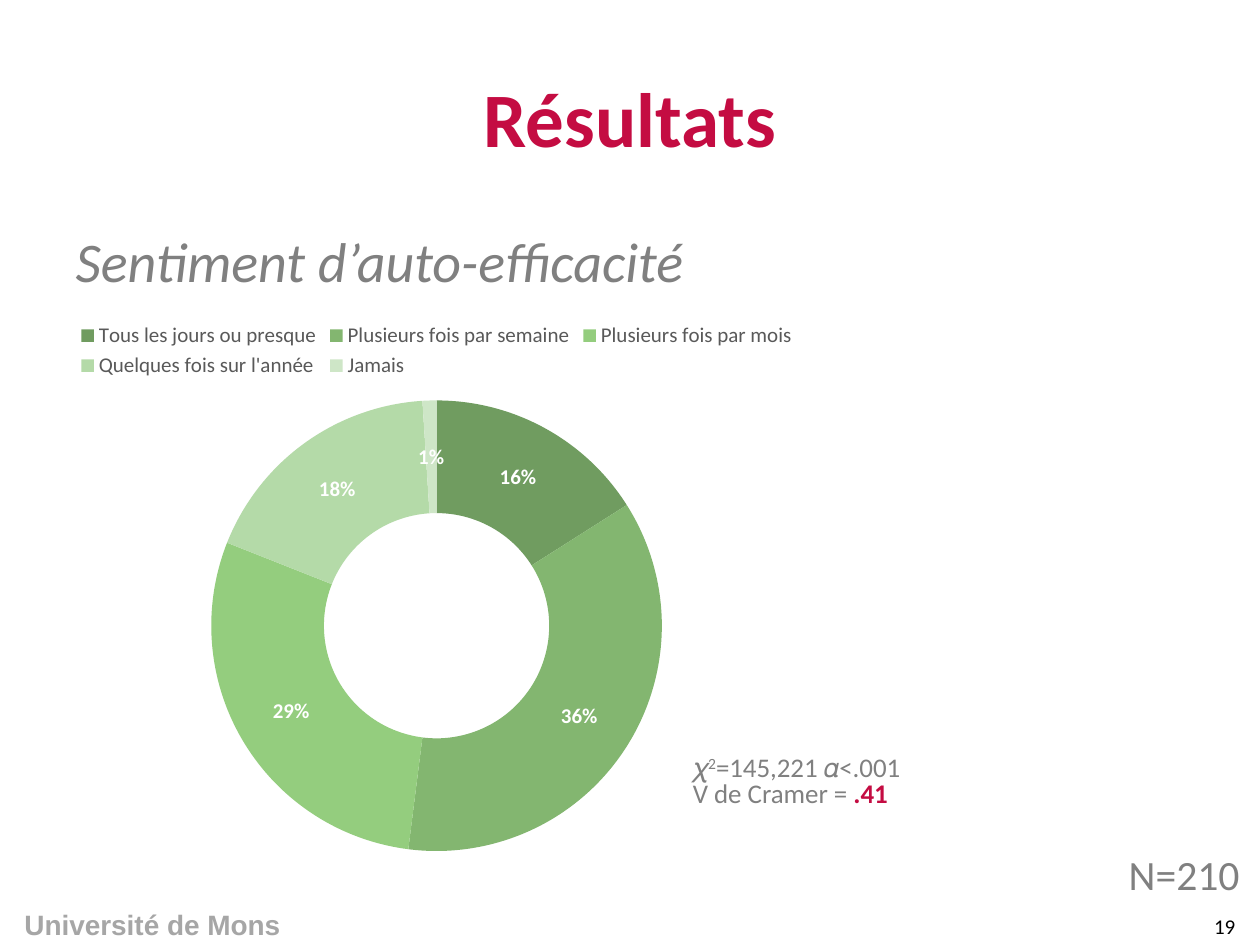
"""Build the results slide with a doughnut chart of self-efficacy."""
import pptx
import pptx.util
import pptx.chart.data
import pptx.dml.color
import pptx.enum.chart
import pptx.enum.text
import pptx.oxml
import pptx.oxml.ns

WIDE, HIGH = 10, 7.5
GREY, RED = "808080", "C40C42"
ALIGN = pptx.enum.text.PP_ALIGN
MIDDLE = pptx.enum.text.MSO_ANCHOR.MIDDLE

TITLE = "Résultats"
TOPIC = "Sentiment d’auto-efficacité"
SHARES = [
    ("Tous les jours ou presque", 16, "709C60"),
    ("Plusieurs fois par semaine", 36, "83B670"),
    ("Plusieurs fois par mois", 29, "94CD7E"),
    ("Quelques fois sur l'année", 18, "B4DAA8"),
    ("Jamais", 1, "CEE6C7"),
]
STATS = [
    [("𝜒", {}), ("2", {"raised": True}), ("=145,221 𝛼<.001", {})],
    [("V de Cramer = ", {}), (".41", {"color": RED, "bold": True})],
]
NOTES = [
    {"box": (-.1, 95.4, 24.4, 4.9), "lines": [[("Université de Mons", {})]],
     "size": 16, "color": "A6A6A6", "face": "Arial", "bold": True, "align": ALIGN.CENTER},
    {"box": (54, 79.4, 20.1, 7.5), "lines": STATS, "size": 15.4, "space": .8},
    {"box": (88.6, 90.2, 11.1, 5.9), "lines": [[("N=210", {})]], "size": 23.8, "space": .8},
    {"box": (94.4, 96, 5.6, 4), "lines": [[("19", {})]],
     "size": 12, "color": "000000", "align": ALIGN.CENTER, "anchor": MIDDLE},
]


def place(*box):
    return [pptx.util.Inches(part * full / 100)
            for part, full in zip(box, (WIDE, HIGH) * 2)]


def move(shape, box):
    shape.left, shape.top, shape.width, shape.height = place(*box)


def style(font, size, color=GREY, face="Calibri", bold=False, italic=False):
    font.size, font.name = pptx.util.Pt(size), face
    font.bold, font.italic = bold, italic
    font.color.rgb = pptx.dml.color.RGBColor.from_string(color)


def note(slide, box, lines, size, color=GREY, face="Calibri", bold=False,
         align=ALIGN.LEFT, space=None, anchor=None):
    frame = slide.shapes.add_textbox(*place(*box)).text_frame
    frame.word_wrap = False
    frame.vertical_anchor = anchor
    for i, line in enumerate(lines):
        para = frame.add_paragraph() if i else frame.paragraphs[0]
        para.alignment, para.line_spacing = align, space
        mixed = any("color" in look for _, look in line)
        if not mixed:
            style(para.font, size, color, face, bold)
        for text, look in line:
            run = para.add_run()
            run.text = text
            if mixed:
                style(run.font, size, look.get("color", color), face, look.get("bold", bold))
            if look.get("raised"):
                run.font._element.set("baseline", "30000")


def heads(slide):
    title, body = slide.shapes.title, slide.placeholders[1]
    move(title, (5, 4, 90, 16.7))
    move(body, (5, 23.3, 90, 66))
    title.text_frame.text, body.text_frame.text = TITLE, TOPIC
    title.text_frame.vertical_anchor = MIDDLE
    para = title.text_frame.paragraphs[0]
    para.alignment = ALIGN.CENTER
    style(para.font, 44, RED, bold=True)
    para = body.text_frame.paragraphs[0]
    props = para._p.get_or_add_pPr()
    props.set("marL", "0")
    props.set("indent", "0")
    props.append(pptx.oxml.parse_xml(f"<a:buNone {pptx.oxml.ns.nsdecls('a')}/>"))
    style(para.font, 32, italic=True)


def ring(slide):
    names, values, colors = zip(*SHARES)
    data = pptx.chart.data.CategoryChartData()
    data.categories = names
    data.add_series("Series 1", values)
    kind = pptx.enum.chart.XL_CHART_TYPE.DOUGHNUT
    chart = slide.shapes.add_chart(kind, *place(1.3, 32.7, 66.7, 59.2), data).chart
    style(chart.font, 10, "000000")
    chart.has_title = False
    chart.has_legend = True
    chart.legend.position = pptx.enum.chart.XL_LEGEND_POSITION.TOP
    chart.legend.include_in_layout = False
    style(chart.legend.font, 12, "595959")
    plot = chart.plots[0]
    plot.vary_by_categories = True
    for i, color in enumerate(colors):
        fill = plot.series[0].points[i].format.fill
        fill.solid()
        fill.fore_color.rgb = pptx.dml.color.RGBColor.from_string(color)
    labels = plot.series[0].data_labels
    labels.show_percentage, labels.show_value = True, False
    labels.number_format, labels.number_format_is_linked = "0%", False
    style(labels.font, 12, "FFFFFF", bold=True)


def main():
    deck = pptx.Presentation()
    deck.slide_width, deck.slide_height = pptx.util.Inches(WIDE), pptx.util.Inches(HIGH)
    slide = deck.slides.add_slide(deck.slide_layouts[1])
    heads(slide)
    ring(slide)
    for item in NOTES:
        note(slide, **item)
    deck.save("out.pptx")


if __name__ == "__main__":
    main()
